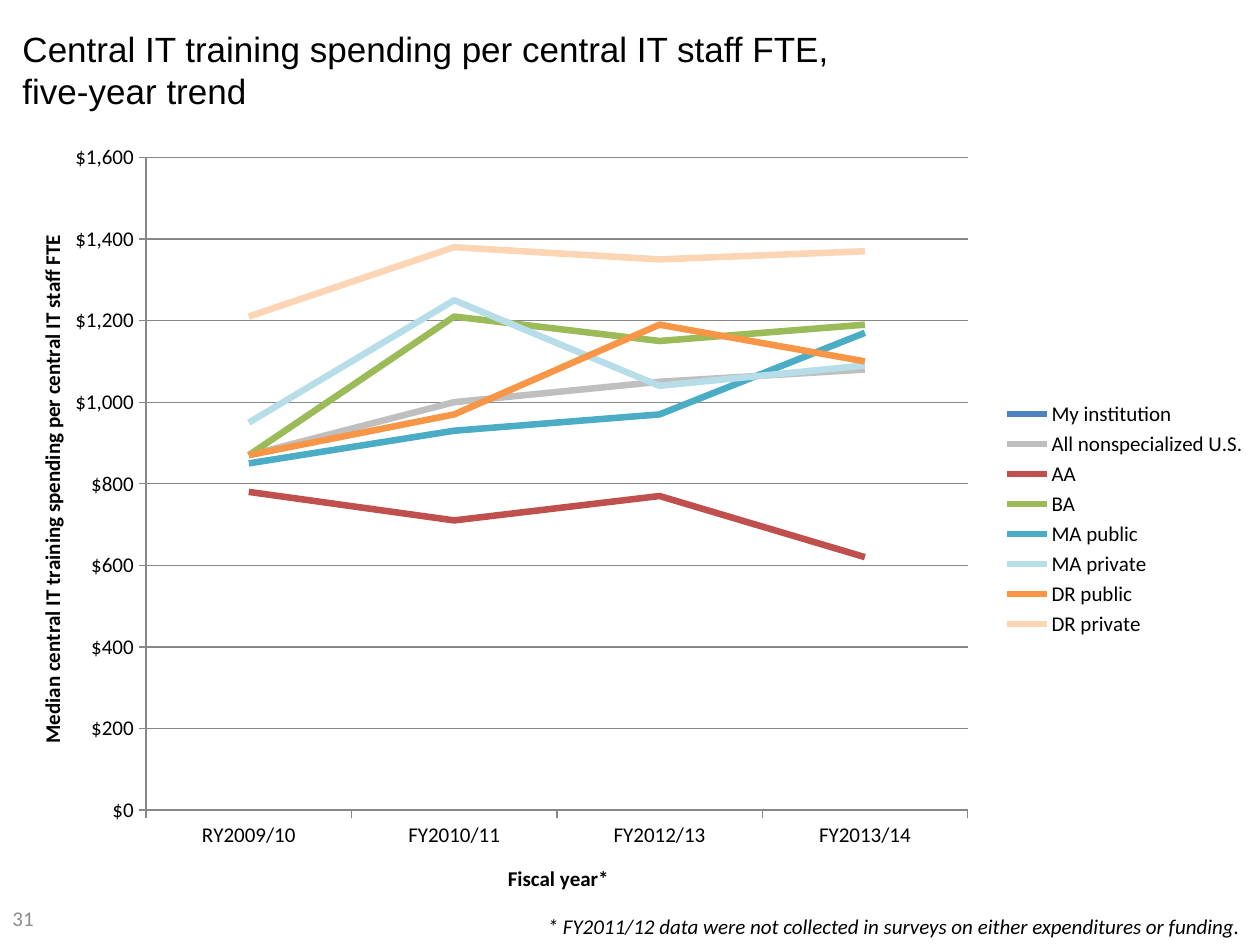
from dataclasses import dataclass

from lxml import etree
from pptx import Presentation
from pptx.chart.data import CategoryChartData
from pptx.dml.color import RGBColor
from pptx.enum.chart import XL_CHART_TYPE, XL_LEGEND_POSITION, XL_TICK_MARK
from pptx.enum.text import MSO_ANCHOR, PP_ALIGN
from pptx.util import Inches, Pt

LINE_CHART = XL_CHART_TYPE.LINE
LEGEND_RIGHT = XL_LEGEND_POSITION.RIGHT
TICK_OUTSIDE, TICK_NONE = XL_TICK_MARK.OUTSIDE, XL_TICK_MARK.NONE
TOP, MIDDLE = MSO_ANCHOR.TOP, MSO_ANCHOR.MIDDLE
LEFT, RIGHT = PP_ALIGN.LEFT, PP_ALIGN.RIGHT


@dataclass(frozen=True)
class Theme:
    title_font: str = "Arial"
    body_font: str = "Calibri"
    title_size: int = 20
    body_size: int = 12
    text: str = "000000"
    muted: str = "8C8C8C"
    axis: str = "878787"
    axis_width: float = 0.75
    series_width: float = 3.75


THEME = Theme()
SLIDE_WIDTH, SLIDE_HEIGHT = 10, 7.5

# Places as left, top, width, height in inches
TITLE_BOX = (0.08, 0.17, 9.35, 1)
CHART_BOX = (0, 1.08, SLIDE_WIDTH, 6.08)
NUMBER_BOX = (0, 7.08, 1.08, 0.42)
FOOTNOTE_BOX = (0.48, 7.2, 9.5, 0.3)

# Places inside the chart, as shares of its size
PLOT_LAYOUT = {"x": 0.116, "y": 0.028, "w": 0.652, "h": 0.852}
YEAR_TITLE_LAYOUT = {"x": 0.4, "y": 0.945}
SPENDING_TITLE_LAYOUT = {"x": 0.027, "y": 0.124}

FISCAL_YEARS = ("RY2009/10", "FY2010/11", "FY2012/13", "FY2013/14")
SPENDING = (
    ("My institution", "4F81BD", (None, None, None, None)),
    ("All nonspecialized U.S.", "BFBFBF", (870, 1000, 1050, 1080)),
    ("AA", "C0504D", (780, 710, 770, 620)),
    ("BA", "9BBB59", (870, 1210, 1150, 1190)),
    ("MA public", "4BACC6", (850, 930, 970, 1170)),
    ("MA private", "B7DEE8", (950, 1250, 1040, 1090)),
    ("DR public", "F79646", (870, 970, 1190, 1100)),
    ("DR private", "FCD5B5", (1210, 1380, 1350, 1370)),
)


def set_attributes(target, values):
    for name, value in values.items():
        setattr(target, name, value)


def style_font(font, color=THEME.text, name=THEME.body_font,
               size=THEME.body_size, **extra):
    set_attributes(font, {"name": name, "size": Pt(size), **extra})
    font.color.rgb = RGBColor.from_string(color)


def style_line(line, color, width):
    line.color.rgb = RGBColor.from_string(color)
    line.width = Pt(width)


def add_text(slide, box, text, anchor=TOP, alignment=LEFT, **font_values):
    shape = slide.shapes.add_textbox(*map(Inches, box))
    set_attributes(shape.text_frame,
                   {"word_wrap": True, "vertical_anchor": anchor})
    paragraph = shape.text_frame.paragraphs[0]
    set_attributes(paragraph, {"text": text, "alignment": alignment})
    for run in paragraph.runs:
        style_font(run.font, **font_values)


def place_part(part, position, settings):
    """Give a chart part a manual layout as its child at the position."""
    namespace = "{%s}" % part.nsmap["c"]
    for old_layout in part.findall(namespace + "layout"):
        part.remove(old_layout)
    layout = etree.Element(namespace + "layout")
    manual = etree.SubElement(layout, namespace + "manualLayout")
    for tag, value in settings.items():
        etree.SubElement(manual, namespace + tag, val=str(value))
    part.insert(position, layout)


def style_axis(axis, title, title_layout):
    set_attributes(axis, {"major_tick_mark": TICK_OUTSIDE,
                          "minor_tick_mark": TICK_NONE})
    style_line(axis.format.line, THEME.axis, THEME.axis_width)
    axis.axis_title.text_frame.text = title
    run = axis.axis_title.text_frame.paragraphs[0].runs[0]
    style_font(run.font, bold=True)
    place_part(axis.axis_title._element, 1,
               {"xMode": "edge", "yMode": "edge", **title_layout})


def add_spending_chart(slide):
    data = CategoryChartData(number_format='"$"#,##0')
    data.categories = FISCAL_YEARS
    for name, _, values in SPENDING:
        data.add_series(name, values)
    chart = slide.shapes.add_chart(
        LINE_CHART, *map(Inches, CHART_BOX), data).chart
    set_attributes(chart, {"has_title": False, "has_legend": True})
    style_font(chart.font)
    set_attributes(chart.legend, {"position": LEGEND_RIGHT,
                                  "include_in_layout": False})
    place_part(chart._chartSpace.chart.plotArea, 0,
               {"layoutTarget": "inner", "xMode": "edge", "yMode": "edge",
                **PLOT_LAYOUT})

    # Axes and gridlines
    style_axis(chart.category_axis, "Fiscal year*", YEAR_TITLE_LAYOUT)
    value_axis = chart.value_axis
    style_axis(value_axis,
               "Median central IT training spending per central IT staff FTE",
               SPENDING_TITLE_LAYOUT)
    set_attributes(value_axis, {"minimum_scale": 0, "maximum_scale": 1600,
                                "major_unit": 200,
                                "has_major_gridlines": True})
    set_attributes(value_axis.tick_labels,
                   {"number_format": '"$"#,##0',
                    "number_format_is_linked": False})
    style_line(value_axis.major_gridlines.format.line,
               THEME.axis, THEME.axis_width)

    # Trend lines
    plot = chart.plots[0]
    plot.vary_by_categories = False
    for series, (_, color, _) in zip(plot.series, SPENDING):
        series.smooth = False
        style_line(series.format.line, color, THEME.series_width)


def main():
    presentation = Presentation()
    set_attributes(presentation, {"slide_width": Inches(SLIDE_WIDTH),
                                  "slide_height": Inches(SLIDE_HEIGHT)})
    slide = presentation.slides.add_slide(presentation.slide_layouts[6])

    # Title
    add_text(slide, TITLE_BOX,
             "Central IT training spending per central IT staff FTE,\n"
             "five-year trend",
             name=THEME.title_font, size=THEME.title_size)
    # Chart
    add_spending_chart(slide)
    # Slide number and footnote
    add_text(slide, NUMBER_BOX, "31", anchor=MIDDLE, color=THEME.muted)
    add_text(slide, FOOTNOTE_BOX,
             "* FY2011/12 data were not collected in surveys on either "
             "expenditures or funding. ",
             alignment=RIGHT, italic=True)
    presentation.save("out.pptx")


if __name__ == "__main__":
    main()
